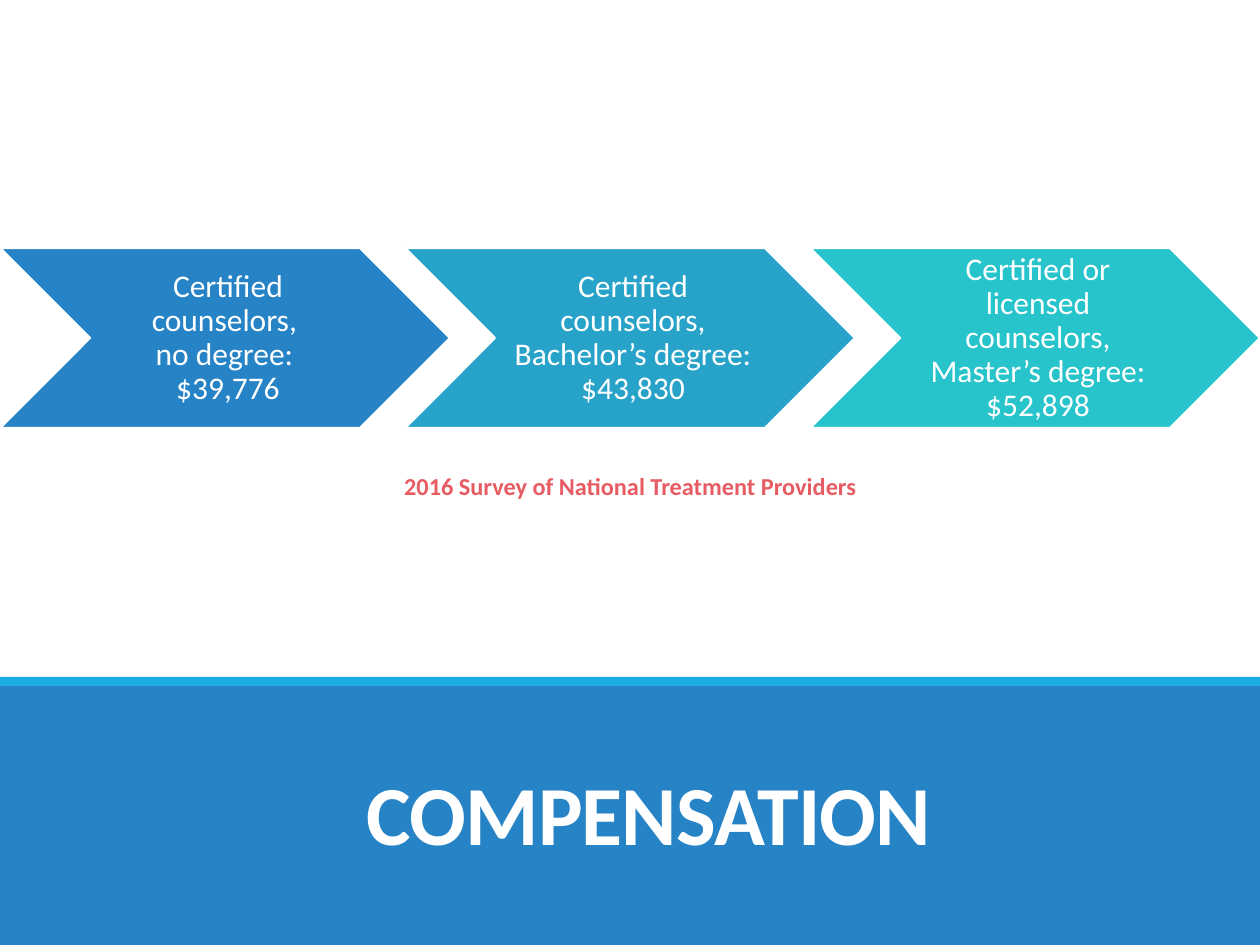
import pptx
import pptx.util
import pptx.dml.color
import pptx.enum.shapes
import pptx.enum.text
from dataclasses import dataclass


@dataclass(frozen=True)
class Theme:
    font: str = "Calibri"
    white: str = "FFFFFF"
    band: str = "2683C6"
    stripe: str = "1CADE4"
    source: str = "E75C63"
    steps: tuple = ("2683C6", "27A3C9", "28C4CC")
    title_size: float = 48
    step_size: float = 18
    source_size: float = 13.9


theme = Theme()
PX = pptx.util.Inches(1) / 126
SHAPE = pptx.enum.shapes.MSO_SHAPE
ANCHOR = pptx.enum.text.MSO_ANCHOR
rgb = pptx.dml.color.RGBColor.from_string


def add_filled(kind, box, fill, outline=None):
    shape = slide.shapes.add_shape(kind, *(round(v * PX) for v in box))
    shape.shadow.inherit = False
    shape.fill.solid()
    shape.fill.fore_color.rgb = rgb(fill)
    if outline:
        shape.line.color.rgb = rgb(outline)
        shape.line.width = pptx.util.Pt(1.25)
    else:
        shape.line.fill.background()


def add_text(box, text, size, color, anchor, margins, line_spacing, bold=False):
    """Add a centred text box; margins are left, top, right, bottom in px."""
    shape = slide.shapes.add_textbox(*(round(v * PX) for v in box))
    frame = shape.text_frame
    frame.word_wrap = True
    frame.vertical_anchor = anchor
    (frame.margin_left, frame.margin_top,
     frame.margin_right, frame.margin_bottom) = (round(v * PX) for v in margins)
    paragraph = frame.paragraphs[0]
    paragraph.text = text
    paragraph.alignment = pptx.enum.text.PP_ALIGN.CENTER
    paragraph.line_spacing = line_spacing
    paragraph.font.name = theme.font
    paragraph.font.size = pptx.util.Pt(size)
    paragraph.font.bold = bold
    paragraph.font.color.rgb = rgb(color)
    return paragraph


presentation = pptx.Presentation()
presentation.slide_width = round(1260 * PX)
presentation.slide_height = round(945 * PX)
slide = presentation.slides.add_slide(presentation.slide_layouts[6])

# Title band
add_filled(SHAPE.RECTANGLE, (0, 683, 1260, 262), theme.band)
add_filled(SHAPE.RECTANGLE, (0, 677, 1260, 9), theme.stripe)
title = add_text((126, 755, 1046, 113), "COMPENSATION", theme.title_size,
                 theme.white, ANCHOR.BOTTOM, (9, 5, 9, 5), 0.85, bold=True)
title.runs[0].font._element.set("spc", "-50")

# Salary chevrons
salaries = (
    "Certified counselors, \vno degree: \v$39,776",
    "Certified counselors, Bachelor’s degree: $43,830",
    "Certified or licensed counselors, Master’s degree: $52,898",
)
STEP_TOP, STEP_WIDTH, STEP_HEIGHT, STEP_PITCH = 248, 450, 180, 405
for index, (salary, fill) in enumerate(zip(salaries, theme.steps)):
    left = index * STEP_PITCH
    add_filled(SHAPE.CHEVRON, (left, STEP_TOP, STEP_WIDTH, STEP_HEIGHT),
               fill, theme.white)
    add_text((left + STEP_HEIGHT // 2, STEP_TOP, STEP_WIDTH - STEP_HEIGHT, STEP_HEIGHT),
             salary, theme.step_size, theme.white, ANCHOR.MIDDLE, (10, 4, 4, 4), 0.9)

# Source of the figures
add_text((111, 472, 1039, 38), "2016 Survey of National Treatment Providers",
         theme.source_size, theme.source, ANCHOR.TOP, (0, 5, 0, 5), 0.8, bold=True)

presentation.save("out.pptx")
